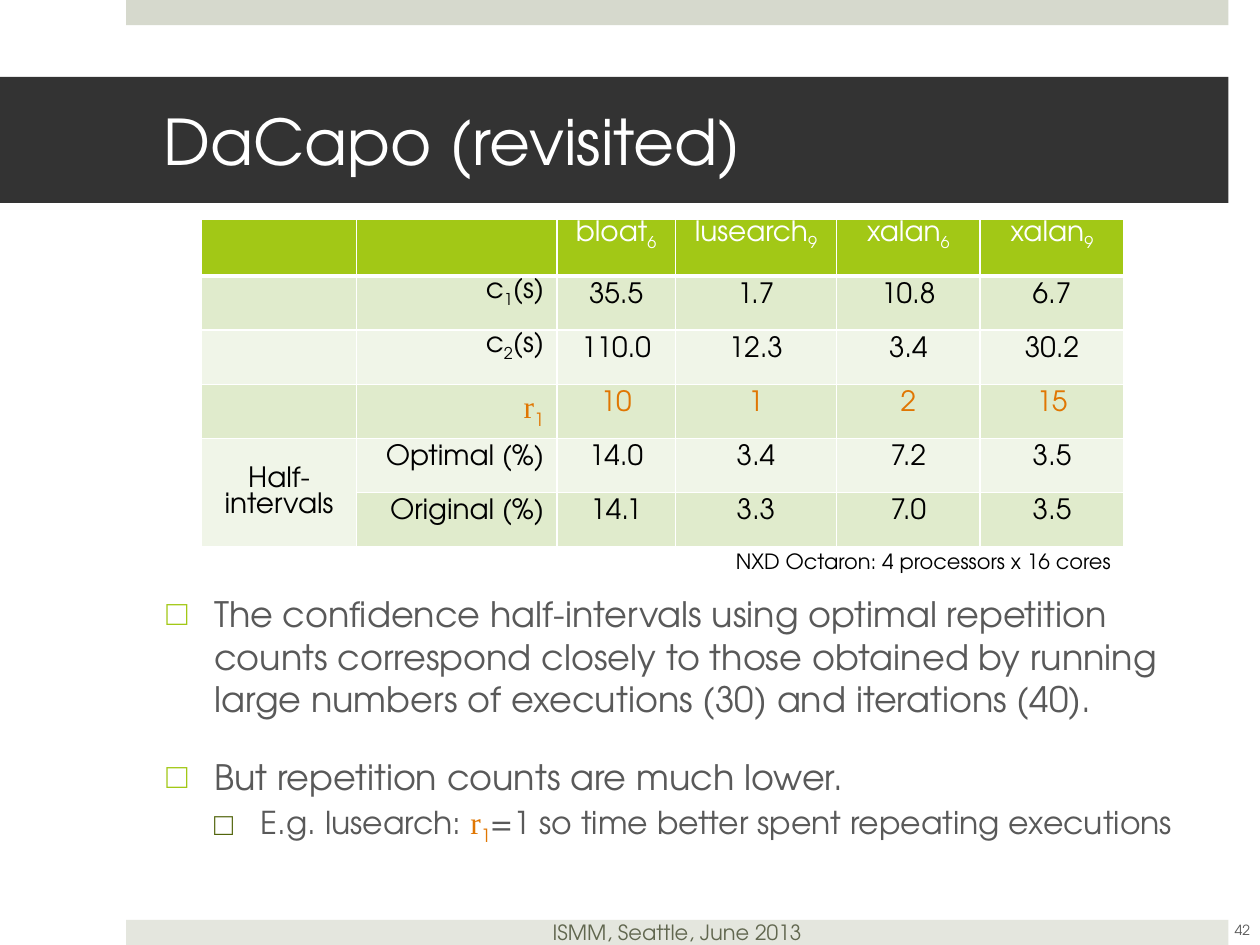
from lxml import etree
from pptx import Presentation
from pptx.dml.color import RGBColor
from pptx.enum.shapes import MSO_SHAPE
from pptx.enum.text import MSO_ANCHOR, MSO_AUTO_SIZE, PP_ALIGN
from pptx.oxml.ns import qn
from pptx.util import Inches, Pt

RECTANGLE = MSO_SHAPE.RECTANGLE
MIDDLE, TOP = MSO_ANCHOR.MIDDLE, MSO_ANCHOR.TOP
LEFT, CENTER, RIGHT = PP_ALIGN.LEFT, PP_ALIGN.CENTER, PP_ALIGN.RIGHT
NO_FIT = MSO_AUTO_SIZE.NONE

SANS, SERIF = "TeX Gyre Adventor", "Times New Roman"
WHITE = RGBColor(0xFF, 0xFF, 0xFF)
BLACK = RGBColor(0, 0, 0)
CHARCOAL = RGBColor(0x33, 0x33, 0x33)
GRAY = RGBColor(0x59, 0x59, 0x59)
TOP_BAR = RGBColor(0xD6, 0xD9, 0xCD)
FOOTER_BAR = RGBColor(0xE4, 0xE6, 0xDE)
FOOTER_TEXT = RGBColor(0x61, 0x67, 0x4F)
GREEN = RGBColor(0xA2, 0xC8, 0x16)
DARK_GREEN = RGBColor(0x51, 0x64, 0x0B)
ORANGE = RGBColor(0xE0, 0x76, 0x02)
BAND_DARK = RGBColor(0xE0, 0xEB, 0xCC)
BAND_LIGHT = RGBColor(0xF0, 0xF5, 0xE8)

COLUMN_WIDTHS = [1.23, 1.59, 0.94, 1.28, 1.14, 1.14]
ROW_HEIGHTS = [0.45] + [0.43] * 5 + [0.22]
BENCHMARKS = [("bloat", "6"), ("lusearch", "9"), ("xalan", "6"), ("xalan", "9")]
# Label pieces alternate between normal text and subscript.
RESULTS = [
    (("c", "1", "(s)"), ["35.5", "1.7", "10.8", "6.7"]),
    (("c", "2", "(s)"), ["110.0", "12.3", "3.4", "30.2"]),
    (("r", "1"), ["10", "1", "2", "15"]),
    (("Optimal (%)",), ["14.0", "3.4", "7.2", "3.5"]),
    (("Original (%)",), ["14.1", "3.3", "7.0", "3.5"]),
]
REPETITION_ROW = 3


def add_span(para, text, size, color, font=SANS, subscript=False):
    span = para.add_run()
    span.text = text
    span.font.size = Pt(size)
    span.font.name = font
    span.font.color.rgb = color
    if subscript:
        span.font._element.set("baseline", "-25000")


def set_insets(frame, left, top, right, bottom):
    frame.margin_left, frame.margin_top = Inches(left), Inches(top)
    frame.margin_right, frame.margin_bottom = Inches(right), Inches(bottom)


def place(shape, left, top, width, height):
    shape.left, shape.top = Inches(left), Inches(top)
    shape.width, shape.height = Inches(width), Inches(height)


def add_bar(page, top, color):
    bar = page.shapes.add_shape(RECTANGLE, Inches(1), Inches(top), Inches(8.75), Inches(0.2))
    bar.shadow.inherit = False
    bar.fill.solid()
    bar.fill.fore_color.rgb = color
    bar.line.fill.background()
    return bar


def add_footer(page):
    frame = add_bar(page, 7.3, FOOTER_BAR).text_frame
    set_insets(frame, 0.1, 0, 0.1, 0)
    frame.vertical_anchor = MIDDLE
    para = frame.paragraphs[0]
    para.alignment = CENTER
    add_span(para, "ISMM, Seattle, June 2013", 12, FOOTER_TEXT)


def add_page_number(page):
    box = page.shapes.add_textbox(Inches(9.72), Inches(7.18), Inches(0.28), Inches(0.4))
    frame = box.text_frame
    frame.word_wrap = True
    frame.vertical_anchor = MIDDLE
    set_insets(frame, 0, 0, 0, 0)
    para = frame.paragraphs[0]
    para.alignment = CENTER
    add_span(para, "42", 8, GRAY)


def fill_title(title):
    place(title, 0, 0.61, 9.75, 1)
    title.fill.solid()
    title.fill.fore_color.rgb = CHARCOAL
    frame = title.text_frame
    frame.auto_size = NO_FIT
    frame.vertical_anchor = MIDDLE
    set_insets(frame, 1.3, 0.05, 0.3, 0.05)
    para = frame.paragraphs[0]
    para.alignment = LEFT
    add_span(para, "DaCapo (revisited)", 36, WHITE)


def format_bullet(para, indent, hanging, color, line_height, space_before):
    para.alignment = LEFT
    para.line_spacing = Pt(line_height)
    para.space_before = Pt(space_before)
    para.space_after = Pt(0)
    properties = para._p.get_or_add_pPr()
    properties.set("marL", str(Inches(indent)))
    properties.set("indent", str(-Inches(hanging)))
    bullet_color = etree.SubElement(properties, qn("a:buClr"))
    etree.SubElement(bullet_color, qn("a:srgbClr")).set("val", str(color))
    etree.SubElement(properties, qn("a:buChar")).set("char", "□")


def fill_body(body):
    place(body, 1.22, 4.65, 8.32, 1.78)
    frame = body.text_frame
    frame.auto_size = NO_FIT
    frame.vertical_anchor = TOP
    points = [
        "The confidence half-intervals using optimal repetition counts correspond closely "
        "to those obtained by running large numbers of executions (30) and iterations (40).",
        "But repetition counts are much lower.",
    ]
    for index, point in enumerate(points):
        para = frame.add_paragraph() if index else frame.paragraphs[0]
        format_bullet(para, 0.38, 0.38, GREEN, 24.3, 20 if index else 0)
        add_span(para, point, 20, GRAY)
    example = frame.add_paragraph()
    example.level = 1
    format_bullet(example, 0.75, 0.37, DARK_GREEN, 22, 6)
    add_span(example, "E.g. lusearch: ", 18, GRAY)
    add_span(example, "r", 18, ORANGE, SERIF)
    add_span(example, "1", 18, ORANGE, subscript=True)
    add_span(example, "=1 so time better spent repeating executions", 18, GRAY)


def style_cell(cell, row, fill):
    properties = cell._tc.get_or_add_tcPr()
    for side in "LRTB":
        heavy = (row == 0 and side == "B") or (row == 1 and side == "T")
        line = etree.SubElement(properties, qn("a:ln" + side))
        line.set("w", str(Pt(3 if heavy else 1)))
        solid = etree.SubElement(line, qn("a:solidFill"))
        etree.SubElement(solid, qn("a:srgbClr")).set("val", str(WHITE))
    if fill is None:
        cell.fill.background()
    else:
        cell.fill.solid()
        cell.fill.fore_color.rgb = fill


def write_cell(cell, pieces, alignment, color, size=16, line_height=15):
    """Write pieces that alternate between normal text and subscript."""
    para = cell.text_frame.paragraphs[0]
    para.alignment = alignment
    para.line_spacing = Pt(line_height)
    for index, piece in enumerate(pieces):
        add_span(para, piece, size, color, subscript=index % 2 == 1)


def add_results_table(page):
    frame = page.shapes.add_table(len(ROW_HEIGHTS), len(COLUMN_WIDTHS), Inches(1.6),
                                  Inches(1.74), Inches(7.32), Inches(2.82))
    table = frame.table
    table.first_row = table.horz_banding = False
    for column, width in zip(table.columns, COLUMN_WIDTHS):
        column.width = Inches(width)
    fills = [GREEN] + [BAND_DARK, BAND_LIGHT] * 2 + [BAND_DARK, None]
    for row, (height, fill) in enumerate(zip(ROW_HEIGHTS, fills)):
        table.rows[row].height = Inches(height)
        for cell in table.rows[row].cells:
            style_cell(cell, row, fill)

    for column, pieces in enumerate(BENCHMARKS, 2):
        write_cell(table.cell(0, column), pieces, CENTER, WHITE)
    for row, (label, values) in enumerate(RESULTS, 1):
        color = ORANGE if row == REPETITION_ROW else BLACK
        if row == REPETITION_ROW:
            para = table.cell(row, 1).text_frame.paragraphs[0]
            para.alignment = RIGHT
            add_span(para, label[0], 18, color, SERIF)
            add_span(para, label[1], 18, color, subscript=True)
        else:
            write_cell(table.cell(row, 1), label, RIGHT, color)
        for column, value in enumerate(values, 2):
            write_cell(table.cell(row, column), [value], CENTER, color)

    group = table.cell(4, 0)
    group.merge(table.cell(5, 0))
    group.vertical_anchor = MIDDLE
    write_cell(group, ["Half-intervals"], CENTER, BLACK)
    machine = table.cell(6, 1)
    machine.merge(table.cell(6, 5))
    write_cell(machine, ["NXD Octaron: 4 processors x 16 cores"], RIGHT, BLACK, 12, 11.5)


def main():
    deck = Presentation()
    deck.slide_width, deck.slide_height = Inches(10), Inches(7.5)
    page = deck.slides.add_slide(deck.slide_layouts[1])
    add_bar(page, 0, TOP_BAR)
    add_footer(page)
    fill_title(page.shapes.title)
    fill_body(page.placeholders[1])
    add_results_table(page)
    add_page_number(page)
    deck.save("out.pptx")


if __name__ == "__main__":
    main()
